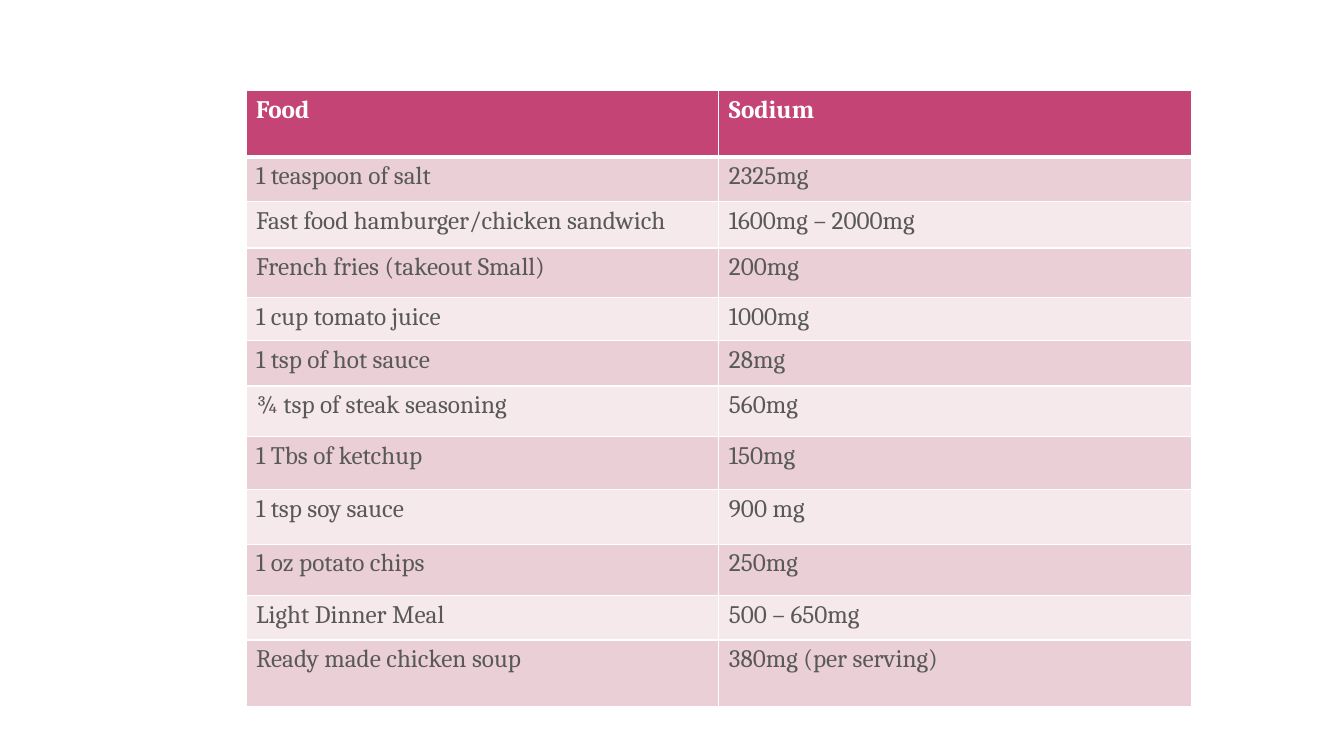
"""Build a slide with a table of sodium in common foods."""
from dataclasses import dataclass

from lxml.etree import SubElement as Sub
from pptx import Presentation
from pptx.dml.color import RGBColor as Rgb
from pptx.oxml.ns import qn
from pptx.util import Inches, Pt


@dataclass(frozen=True)
class Theme:
    font: str = "Cambria"
    size: int = 18
    head: str = "C44475"
    bands: tuple = ("F5E9EC", "EACFD6")
    ink: str = "595959"
    white: str = "FFFFFF"
    thin: int = 1
    thick: int = 3


THEME = Theme()

FOODS = [
    ("Food", "Sodium", 0.66),
    ("1 teaspoon of salt", "2325mg", 0.44),
    ("Fast food hamburger/chicken sandwich", "1600mg – 2000mg", 0.46),
    ("French fries (takeout Small)", "200mg", 0.49),
    ("1 cup tomato juice", "1000mg", 0.43),
    ("1 tsp of hot sauce", "28mg", 0.45),
    ("¾ tsp of steak seasoning", "560mg", 0.5),
    ("1 Tbs of ketchup", "150mg", 0.53),
    ("1 tsp soy sauce", "900 mg", 0.54),
    ("1 oz potato chips", "250mg", 0.51),
    ("Light Dinner Meal", "500 – 650mg", 0.44),
    ("Ready made chicken soup", "380mg (per serving)", 0.66),
]


def add_edge(cell, side, width):
    edge = Sub(cell._tc.get_or_add_tcPr(), qn(f"a:ln{side}"), w=str(Pt(width)))
    Sub(Sub(edge, qn("a:solidFill")), qn("a:srgbClr"), val=THEME.white)


def style_cell(cell, text, row):
    head = row == 0
    for side in "LRTB":
        heavy = (row, side) in ((0, "B"), (1, "T"))
        add_edge(cell, side, THEME.thick if heavy else THEME.thin)
    cell.fill.solid()
    fill = THEME.head if head else THEME.bands[row % 2]
    cell.fill.fore_color.rgb = Rgb.from_string(fill)
    cell.text = text
    font = cell.text_frame.paragraphs[0].font
    font.name = THEME.font
    font.size = Pt(THEME.size)
    font.bold = head
    font.color.rgb = Rgb.from_string(THEME.white if head else THEME.ink)


def add_grid(slide, foods, left, top, width):
    high = sum(food[-1] for food in foods)
    frame = slide.shapes.add_table(
        len(foods), 2, Inches(left), Inches(top), Inches(width), Inches(high))
    grid = frame.table
    for row, (*texts, tall) in enumerate(foods):
        grid.rows[row].height = Inches(tall)
        for col, text in enumerate(texts):
            style_cell(grid.cell(row, col), text, row)


def main():
    deck = Presentation()
    deck.slide_width, deck.slide_height = Inches(13.33), Inches(7.5)
    slide = deck.slides.add_slide(deck.slide_layouts.get_by_name("Blank"))
    add_grid(slide, FOODS, 2.44, 0.9, 9.38)
    deck.save("out.pptx")


if __name__ == "__main__":
    main()
